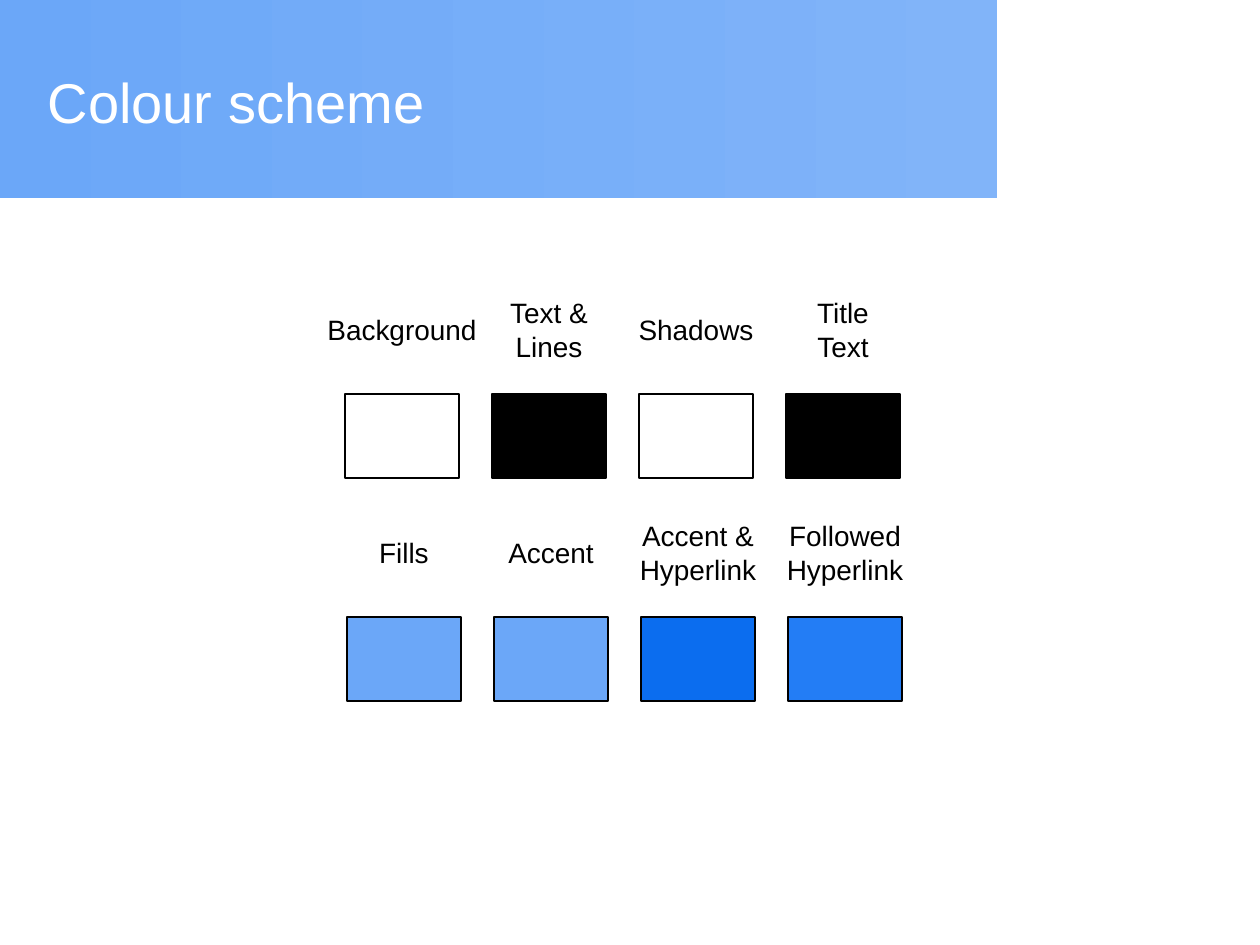
from typing import NamedTuple

from pptx import Presentation
from pptx import util as u
from pptx.dml.color import RGBColor
from pptx.enum import shapes, text

PX = 914400 / 126
FONT = "Arial"
SWATCH_W, SWATCH_H, STEP = 114, 84, 147
LABEL_RISE = 64  # from the swatch top up to the label's middle


class Swatch(NamedTuple):
    label: str
    label_w: int
    colour: str


class Row(NamedTuple):
    left: int
    top: int
    swatches: list[Swatch]


ROWS = [
    Row(345, 394, [
        Swatch("Background", 176, "FFFFFF"),
        Swatch("Text &\nLines", 108, "000000"),
        Swatch("Shadows", 142, "FFFFFF"),
        Swatch("Title\vText", 80, "000000"),
    ]),
    Row(347, 617, [
        Swatch("Fills", 78, "6BA7F8"),
        Swatch("Accent", 114, "6BA7F8"),
        Swatch("Accent &\nHyperlink", 145, "0B6DEF"),
        Swatch("Followed\nHyperlink", 145, "237DF5"),
    ]),
]


def px(n: float) -> u.Emu:
    return u.Emu(round(n * PX))


def rgb(colour: str) -> RGBColor:
    return RGBColor.from_string(colour)


def format_text(tf, size: int, colour: str, align) -> None:
    for p in tf.paragraphs:
        p.alignment = align
        for r in p.runs:
            r.font.name = FONT
            r.font.size = u.Pt(size)
            r.font.color.rgb = rgb(colour)


def add_rect(s, left: int, top: int, width: int, height: int):
    sp = s.shapes.add_shape(shapes.MSO_SHAPE.RECTANGLE,
                            px(left), px(top), px(width), px(height))
    sp.shadow.inherit = False
    return sp


def add_banner(s) -> None:
    sp = add_rect(s, 0, 0, 997, 198)
    sp.line.fill.background()
    sp.fill.gradient()
    sp.fill.gradient_angle = 0
    for stop, position, colour in zip(sp.fill.gradient_stops, (0, 1), ("6BA7F8", "81B4F9")):
        stop.position = position
        stop.color.rgb = rgb(colour)
    # The banner lies behind the title
    s.shapes.title.element.addprevious(sp.element)


def set_title(s, title: str) -> None:
    sp = s.shapes.title
    sp.left, sp.top, sp.width, sp.height = px(35), px(38), px(942), px(127)
    tf = sp.text_frame
    tf.text = title
    tf.vertical_anchor = text.MSO_ANCHOR.MIDDLE
    format_text(tf, 32, "FFFFFF", text.PP_ALIGN.LEFT)


def add_swatch(s, swatch: Swatch, left: int, top: int) -> None:
    sp = add_rect(s, left, top, SWATCH_W, SWATCH_H)
    sp.fill.solid()
    sp.fill.fore_color.rgb = rgb(swatch.colour)
    sp.line.color.rgb = rgb("000000")
    sp.line.width = u.Pt(0.75)


def add_label(s, swatch: Swatch, left: int, top: int) -> None:
    """Centre the label above the swatch that starts at left, top."""
    height = 47 if len(swatch.label.split()) == 1 else 81
    box = s.shapes.add_textbox(px(left + (SWATCH_W - swatch.label_w) / 2),
                               px(top - LABEL_RISE - height / 2),
                               px(swatch.label_w), px(height))
    tf = box.text_frame
    tf.word_wrap = False
    tf.auto_size = text.MSO_AUTO_SIZE.SHAPE_TO_FIT_TEXT
    tf.text = swatch.label
    format_text(tf, 16, "000000", text.PP_ALIGN.CENTER)


def main() -> None:
    prs = Presentation()
    prs.slide_width, prs.slide_height = px(1260), px(945)
    s = prs.slides.add_slide(prs.slide_layouts[5])
    add_banner(s)
    set_title(s, "Colour scheme")
    for row in ROWS:
        for i, swatch in enumerate(row.swatches):
            left = row.left + i * STEP
            add_swatch(s, swatch, left, row.top)
            add_label(s, swatch, left, row.top)
    prs.save("out.pptx")


if __name__ == "__main__":
    main()
